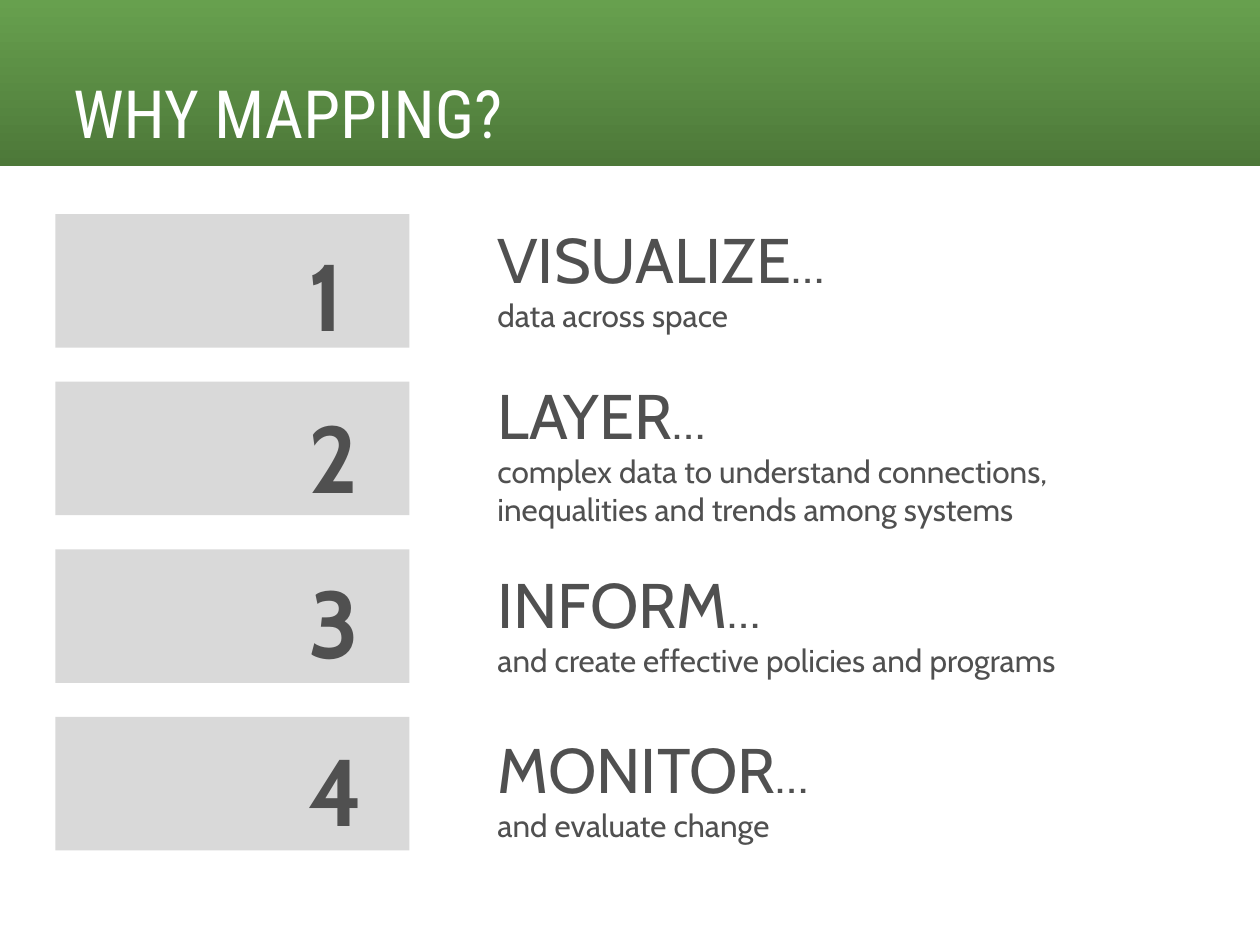
import pptx
import pptx.dml.color
import pptx.enum.shapes
import pptx.enum.text
import pptx.util

Inches, Pt = pptx.util.Inches, pptx.util.Pt
GRAY, DARK, WHITE = "D9D9D9", "505050", "FFFFFF"
BANNER_STOPS = ("4D7839", "67A04E")

TITLE = "WHY MAPPING?"
# heading, detail, space before the heading in points, top of the number
REASONS = [
    ("VISUALIZE", "data across space", 0, 1.83),
    ("LAYER", "complex data to understand connections, "
              "inequalities and trends among systems", 24.3, 3.12),
    ("INFORM", "and create effective policies and programs", 21.9, 4.43),
    ("MONITOR", "and evaluate change", 29.2, 5.76),
]
BLOCK_TOP, BLOCK_PITCH = 1.7, 1.33


def rgb(color):
    return pptx.dml.color.RGBColor.from_string(color)


def add_rect(slide, x, y, w, h):
    sp = slide.shapes.add_shape(pptx.enum.shapes.MSO_SHAPE.RECTANGLE,
                                Inches(x), Inches(y), Inches(w), Inches(h))
    sp.shadow.inherit = False
    sp.line.fill.background()
    return sp


def add_box(slide, x, y, w, h):
    tf = slide.shapes.add_textbox(Inches(x), Inches(y), Inches(w), Inches(h)).text_frame
    tf.word_wrap = True
    return tf


def add_run(p, text, size, font="Cabin", color=DARK, bold=False):
    r = p.add_run()
    r.text = text
    r.font.size = Pt(size)
    r.font.name = font
    r.font.bold = bold
    r.font.color.rgb = rgb(color)


def indent(p):
    p._p.get_or_add_pPr().set("marL", str(Inches(0.5)))


prs = pptx.Presentation()
prs.slide_width, prs.slide_height = Inches(10), Inches(7.5)
s = prs.slides.add_slide(prs.slide_layouts[6])

banner = add_rect(s, 0, 0, 10, 1.32)
banner.fill.gradient()
banner.fill.gradient_angle = 90
for stop, color in zip(banner.fill.gradient_stops, BANNER_STOPS):
    stop.color.rgb = rgb(color)
for stop, position in zip(banner.fill.gradient_stops, (0, 1)):
    stop.position = position

title = add_box(s, 0.58, 0.5, 8.83, 0.75)
title.margin_left = title.margin_right = 0
title.vertical_anchor = pptx.enum.text.MSO_ANCHOR.BOTTOM
add_run(title.paragraphs[0], TITLE, 38, font="Roboto Condensed", color=WHITE)

reasons = add_box(s, 3.35, 1.7, 6.06, 5.35)
for i, (heading, detail, gap, number_top) in enumerate(REASONS):
    block = add_rect(s, 0.44, BLOCK_TOP + i * BLOCK_PITCH, 2.81, 1.06)
    block.fill.solid()
    block.fill.fore_color.rgb = rgb(GRAY)
    number = add_box(s, 2.35, number_top, 1.01, 0.82)
    add_run(number.paragraphs[0], str(i + 1), 54, bold=True)

    p = reasons.add_paragraph() if i else reasons.paragraphs[0]
    indent(p)
    if gap:
        p.space_before = Pt(gap)
    add_run(p, heading, 36)
    add_run(p, "…", 28)
    p = reasons.add_paragraph()
    indent(p)
    add_run(p, detail, 18)

prs.save("out.pptx")
